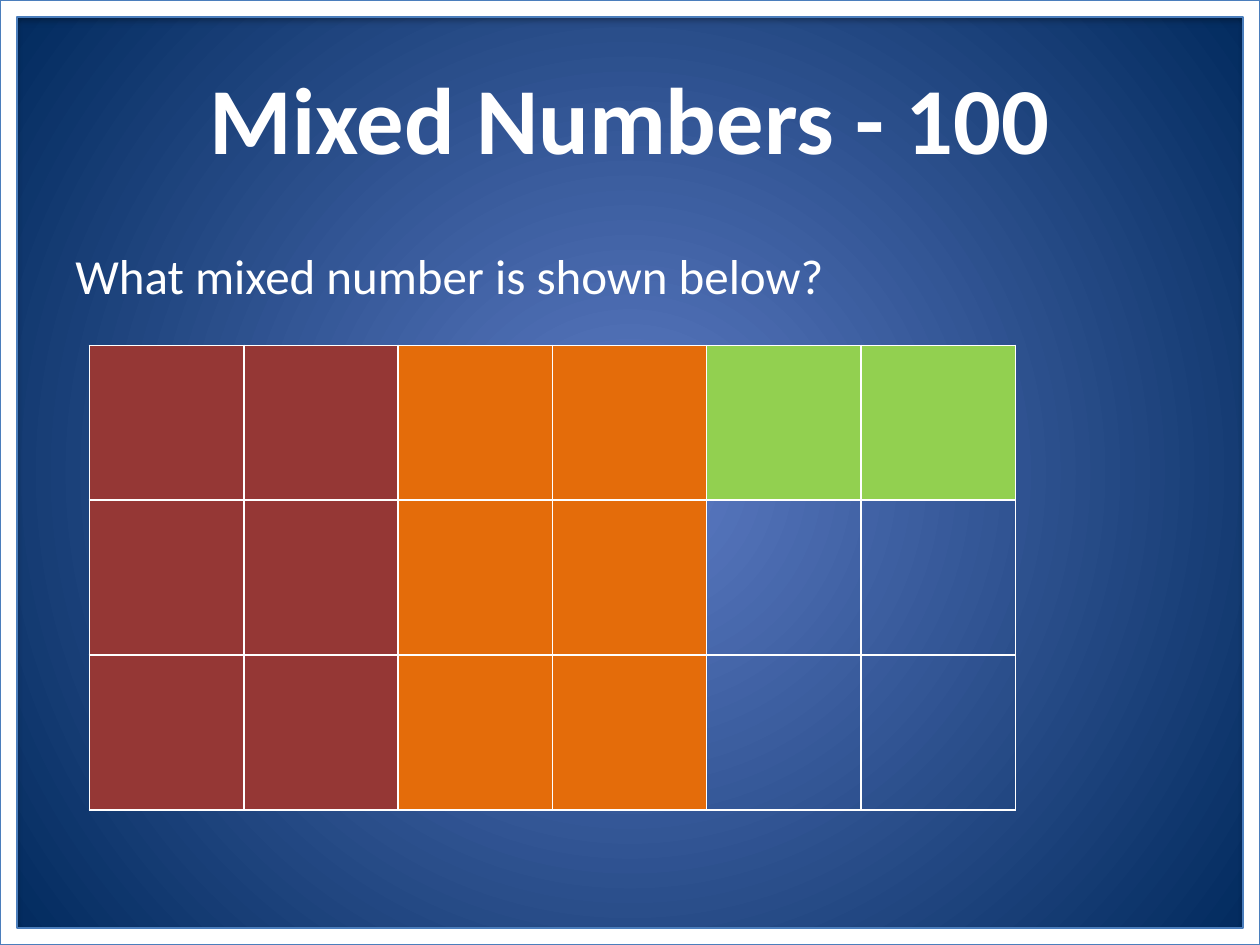
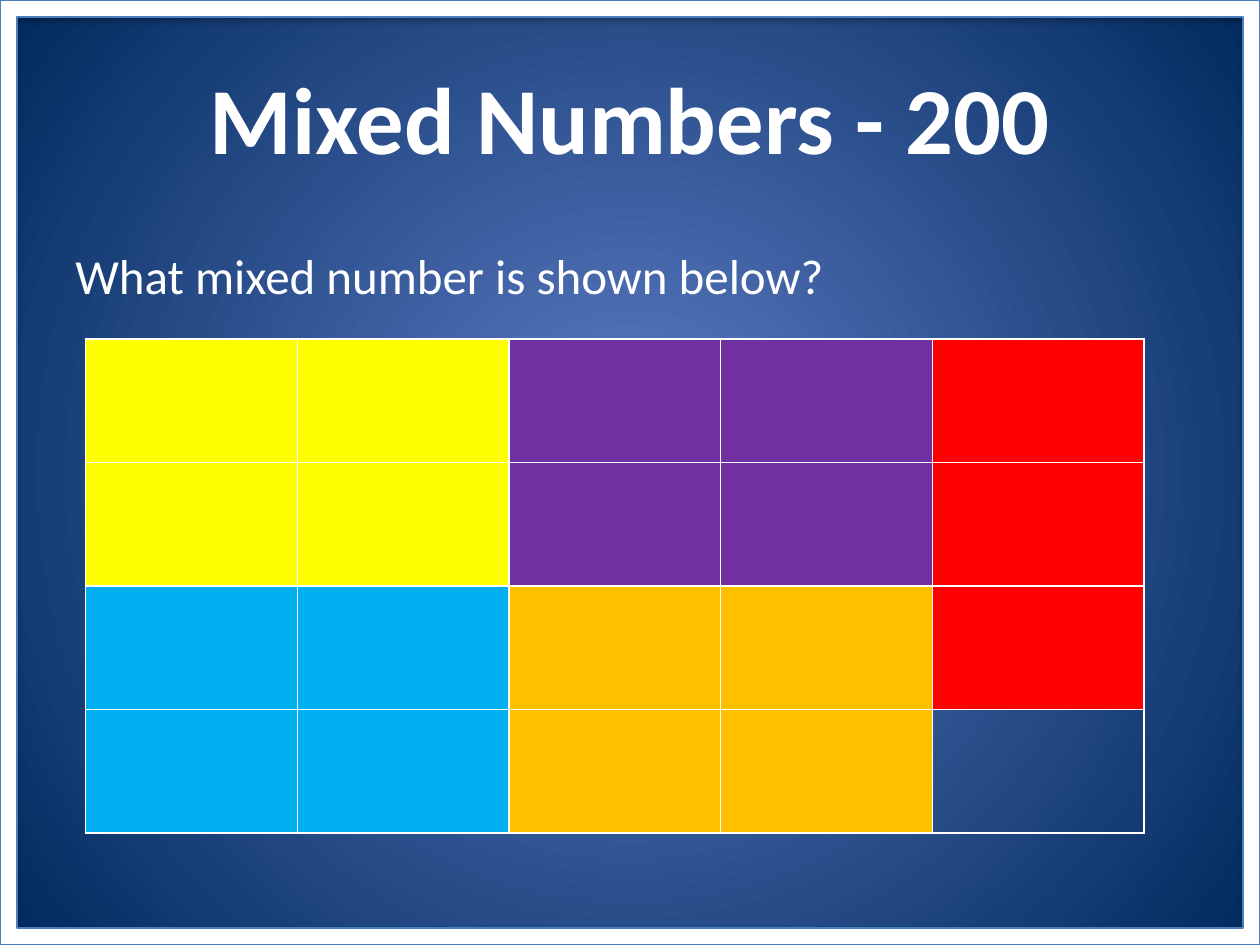
from dataclasses import dataclass
from lxml.etree import SubElement
from pptx import Presentation
from pptx.dml.color import RGBColor
from pptx.enum.shapes import MSO_SHAPE
from pptx.enum.text import MSO_ANCHOR, PP_ALIGN
from pptx.oxml import parse_xml
from pptx.oxml.ns import nsdecls, qn
from pptx.util import Inches, Pt

QUESTION = "What mixed number is shown below?"

# Each letter is one coloured square of the grid; a dot is an empty square.
SLIDES = [
    {
        "title": "Mixed Numbers - 100",
        "left": 0.71, "top": 2.74, "column": 1.225, "row": 1.23,
        "colours": {"M": "953735", "O": "E46C0A", "G": "92D050"},
        "grid": ["MMOOGG",
                 "MMOO..",
                 "MMOO.."],
    },
    {
        "title": "Mixed Numbers - 200",
        "left": 0.68, "top": 2.69, "column": 1.68, "row": 0.98,
        "colours": {"Y": "FFFF00", "P": "7030A0", "R": "FF0000",
                    "B": "00B0F0", "A": "FFC000"},
        "grid": ["YYPPR",
                 "YYPPR",
                 "BBAAR",
                 "BBAA."],
    },
]


@dataclass(frozen=True)
class Theme:
    font: str = "Calibri"
    text: str = "FFFFFF"
    glow: str = "5E7CC5"
    edge: str = "00295C"
    frame: str = "FFFFFF"
    frame_line: str = "4B7EBC"
    grid_line: str = "FFFFFF"
    title_size: int = 54
    question_size: int = 28
    frame_width: float = 0.75
    grid_width: float = 1


THEME = Theme()


def rgb(colour):
    return RGBColor.from_string(colour)


def add_text(slide, text, left, top, width, height, size, bold=False,
             align=PP_ALIGN.LEFT, anchor=MSO_ANCHOR.TOP):
    box = slide.shapes.add_textbox(*map(Inches, (left, top, width, height)))
    frame = box.text_frame
    frame.word_wrap = True
    frame.vertical_anchor = anchor
    paragraph = frame.paragraphs[0]
    paragraph.alignment = align
    run = paragraph.add_run()
    run.text = text
    run.font.name = THEME.font
    run.font.size = Pt(size)
    run.font.bold = bold
    run.font.color.rgb = rgb(THEME.text)


def paint_background(slide):
    """Fill the slide with a circular gradient, bright in the middle."""
    fill = slide.background.fill
    fill.gradient()
    for stop, colour, position in zip(fill.gradient_stops,
                                      (THEME.glow, THEME.edge), (0, 1)):
        stop.color.rgb = rgb(colour)
        stop.position = position
    gradient = next(slide.element.iter(qn("a:gradFill")))
    gradient.replace(gradient.find(qn("a:lin")), parse_xml(
        f'<a:path {nsdecls("a")} path="circle">'
        '<a:fillToRect l="50000" t="50000" r="50000" b="50000"/></a:path>'))


def add_frame(slide, width, height):
    border = slide.shapes.add_shape(MSO_SHAPE.FRAME, 0, 0, width, height)
    border.adjustments[0] = 0.018
    border.fill.solid()
    border.fill.fore_color.rgb = rgb(THEME.frame)
    border.line.color.rgb = rgb(THEME.frame_line)
    border.line.width = Pt(THEME.frame_width)
    border.shadow.inherit = False
    effects = border.element.spPr.find(qn("a:effectLst"))
    shadow = SubElement(effects, qn("a:outerShdw"), blurRad=str(Pt(3.1)),
                        dist=str(Pt(1.8)), dir="5400000", rotWithShape="0")
    black = SubElement(shadow, qn("a:srgbClr"), val="000000")
    SubElement(black, qn("a:alpha"), val="35000")


def outline(cell):
    properties = cell._tc.get_or_add_tcPr()
    for index, side in enumerate(("lnL", "lnR", "lnT", "lnB")):
        properties.insert(index, parse_xml(
            f'<a:{side} {nsdecls("a")} w="{Pt(THEME.grid_width)}"><a:solidFill>'
            f'<a:srgbClr val="{THEME.grid_line}"/></a:solidFill></a:{side}>'))


def add_grid(slide, left, top, column, row, colours, grid):
    rows, columns = len(grid), len(grid[0])
    table = slide.shapes.add_table(
        rows, columns, Inches(left), Inches(top),
        Inches(column * columns), Inches(row * rows)).table
    table.first_row = table.horz_banding = False
    for r, letters in enumerate(grid):
        for c, letter in enumerate(letters):
            cell = table.cell(r, c)
            if letter in colours:
                cell.fill.solid()
                cell.fill.fore_color.rgb = rgb(colours[letter])
            else:
                cell.fill.background()
            outline(cell)


def main():
    deck = Presentation()
    deck.slide_width, deck.slide_height = Inches(10), Inches(7.5)
    for content in SLIDES:
        slide = deck.slides.add_slide(deck.slide_layouts[6])
        paint_background(slide)
        add_text(slide, content["title"], 0.5, 0.3, 9, 1.25,
                 size=THEME.title_size, bold=True,
                 align=PP_ALIGN.CENTER, anchor=MSO_ANCHOR.MIDDLE)
        add_frame(slide, deck.slide_width, deck.slide_height)
        add_text(slide, QUESTION, 0.5, 1.9, 9, 0.57, size=THEME.question_size)
        add_grid(slide, **{key: value for key, value in content.items()
                           if key != "title"})
    deck.save("out.pptx")


if __name__ == "__main__":
    main()
